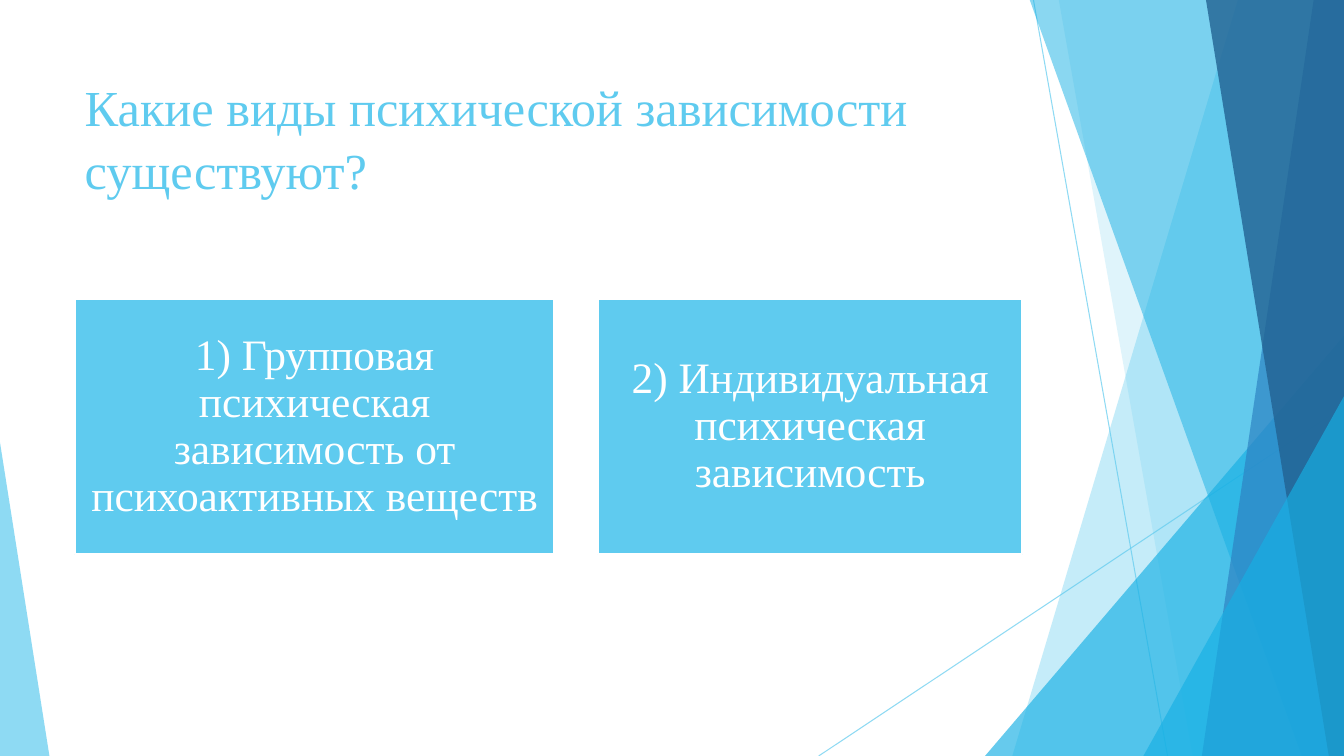
from dataclasses import dataclass

from lxml.etree import SubElement
from pptx import Presentation
from pptx.dml.color import RGBColor
from pptx.enum.shapes import MSO_CONNECTOR, MSO_SHAPE
from pptx.enum.text import MSO_ANCHOR, MSO_AUTO_SIZE, PP_ALIGN
from pptx.oxml.ns import qn
from pptx.util import Inches, Pt

WIDTH, HEIGHT = 13.33, 7.5
BLEED_TOP = -0.01


@dataclass(frozen=True)
class Theme:
    font: str = "Times New Roman"
    title_size: int = 36
    card_size: int = 31
    sky: str = "5FCBEF"
    cyan: str = "17B0E4"
    blue: str = "2E83C3"
    navy: str = "226292"
    white: str = "FFFFFF"


THEME = Theme()


@dataclass(frozen=True)
class Ray:
    start: tuple[float, float]
    end: tuple[float, float]


@dataclass(frozen=True)
class Band:
    """A strip from its slanted left edge to the right side of the slide."""
    top_left: float
    top_right: float
    bottom_left: float
    color: str
    opacity: int


@dataclass(frozen=True)
class Wedge:
    """A right triangle standing on the bottom of the slide."""
    left: float
    top: float
    width: float
    apex: float
    color: str
    opacity: int


@dataclass(frozen=True)
class Card:
    left: float
    width: float
    text: str


RAYS = [Ray((10.25, 0), (11.58, HEIGHT)), Ray((WIDTH, 4.03), (8.12, HEIGHT))]
DECORATIONS = [
    Band(12.28, WIDTH, 10.04, THEME.sky, 36),
    Band(10.5, WIDTH, 11.83, THEME.sky, 20),
    Wedge(9.77, 3.33, 3.56, 1, THEME.cyan, 66),
    Band(10.21, WIDTH, 12.91, THEME.cyan, 50),
    Band(13.03, WIDTH, 11.92, THEME.blue, 70),
    Band(11.96, WIDTH, 13.18, THEME.navy, 80),
    Wedge(11.34, 3.93, 1.99, 1, THEME.cyan, 66),
    Wedge(0, 4.39, 0.49, 0, THEME.sky, 70),
]
TITLE = "Какие виды психической зависимости существуют?"
CARDS = [
    Card(0.74, 4.76, "1) Групповая психическая зависимость от психоактивных веществ"),
    Card(5.93, 4.21, "2) Индивидуальная психическая зависимость"),
]
CARD_TOP, CARD_HEIGHT = 2.97, 2.53


def apply(target, values: dict) -> None:
    for name, value in values.items():
        setattr(target, name, value)


def set_opacity(color_format, percent: int) -> None:
    color = color_format._xFill.find(qn("a:srgbClr"))
    SubElement(color, qn("a:alpha"), val=str(percent * 1000))


def fill_shape(shape, color: str, opacity: int = 100) -> None:
    shape.shadow.inherit = False
    shape.fill.solid()
    shape.fill.fore_color.rgb = RGBColor.from_string(color)
    if opacity < 100:
        set_opacity(shape.fill.fore_color, opacity)


def write_text(shape, text: str, size: int, color: str, frame_format: dict,
               paragraph_format: dict) -> None:
    frame = shape.text_frame
    frame.text = text
    apply(frame, {"word_wrap": True, "auto_size": MSO_AUTO_SIZE.NONE, **frame_format})
    paragraph = frame.paragraphs[0]
    apply(paragraph, paragraph_format)
    font = paragraph.runs[0].font
    apply(font, {"name": THEME.font, "size": Pt(size)})
    font.color.rgb = RGBColor.from_string(color)


def draw_ray(slide, ray: Ray) -> None:
    points = [Inches(value) for value in (*ray.start, *ray.end)]
    connector = slide.shapes.add_connector(MSO_CONNECTOR.STRAIGHT, *points)
    connector.line.width = Pt(0.75)
    connector.line.color.rgb = RGBColor.from_string(THEME.sky)
    set_opacity(connector.line.fill.fore_color, 70)
    SubElement(connector._element.spPr, qn("a:effectLst"))


def draw_decoration(slide, item: Band | Wedge) -> None:
    if isinstance(item, Band):
        corners = [(item.top_left, BLEED_TOP), (item.top_right, BLEED_TOP),
                   (WIDTH, HEIGHT), (item.bottom_left, HEIGHT)]
        points = [(Inches(x), Inches(y)) for x, y in corners]
        builder = slide.shapes.build_freeform(*points[0])
        builder.add_line_segments(points[1:])
        shape = builder.convert_to_shape()
    else:
        shape = slide.shapes.add_shape(
            MSO_SHAPE.ISOSCELES_TRIANGLE, Inches(item.left), Inches(item.top),
            Inches(item.width), Inches(HEIGHT - item.top))
        shape.adjustments[0] = item.apex
    fill_shape(shape, item.color, item.opacity)
    shape.line.fill.background()


def draw_title(slide) -> None:
    title = slide.shapes.title
    apply(title, {"left": Inches(0.74), "top": Inches(0.67),
                  "width": Inches(9.4), "height": Inches(1.44)})
    write_text(title, TITLE, THEME.title_size, THEME.sky,
               {"vertical_anchor": MSO_ANCHOR.TOP},
               {"alignment": PP_ALIGN.LEFT, "line_spacing": 1.05})
    # Bring the title in front of the decorations
    slide.shapes._spTree.append(title._element)


def draw_card(slide, card: Card) -> None:
    shape = slide.shapes.add_shape(
        MSO_SHAPE.RECTANGLE, Inches(card.left), Inches(CARD_TOP),
        Inches(card.width), Inches(CARD_HEIGHT))
    fill_shape(shape, THEME.sky)
    shape.line.color.rgb = RGBColor.from_string(THEME.white)
    shape.line.width = Pt(1.5)
    margins = {f"margin_{side}": Inches(0.13)
               for side in ("left", "top", "right", "bottom")}
    write_text(shape, card.text, THEME.card_size, THEME.white,
               {"vertical_anchor": MSO_ANCHOR.MIDDLE, **margins},
               {"alignment": PP_ALIGN.CENTER, "line_spacing": 0.9})


def main() -> None:
    presentation = Presentation()
    apply(presentation, {"slide_width": Inches(WIDTH), "slide_height": Inches(HEIGHT)})
    slide = presentation.slides.add_slide(presentation.slide_layouts[5])

    # Background facets
    for ray in RAYS:
        draw_ray(slide, ray)
    for item in DECORATIONS:
        draw_decoration(slide, item)

    # Content
    draw_title(slide)
    for card in CARDS:
        draw_card(slide, card)

    presentation.save("out.pptx")


if __name__ == "__main__":
    main()
